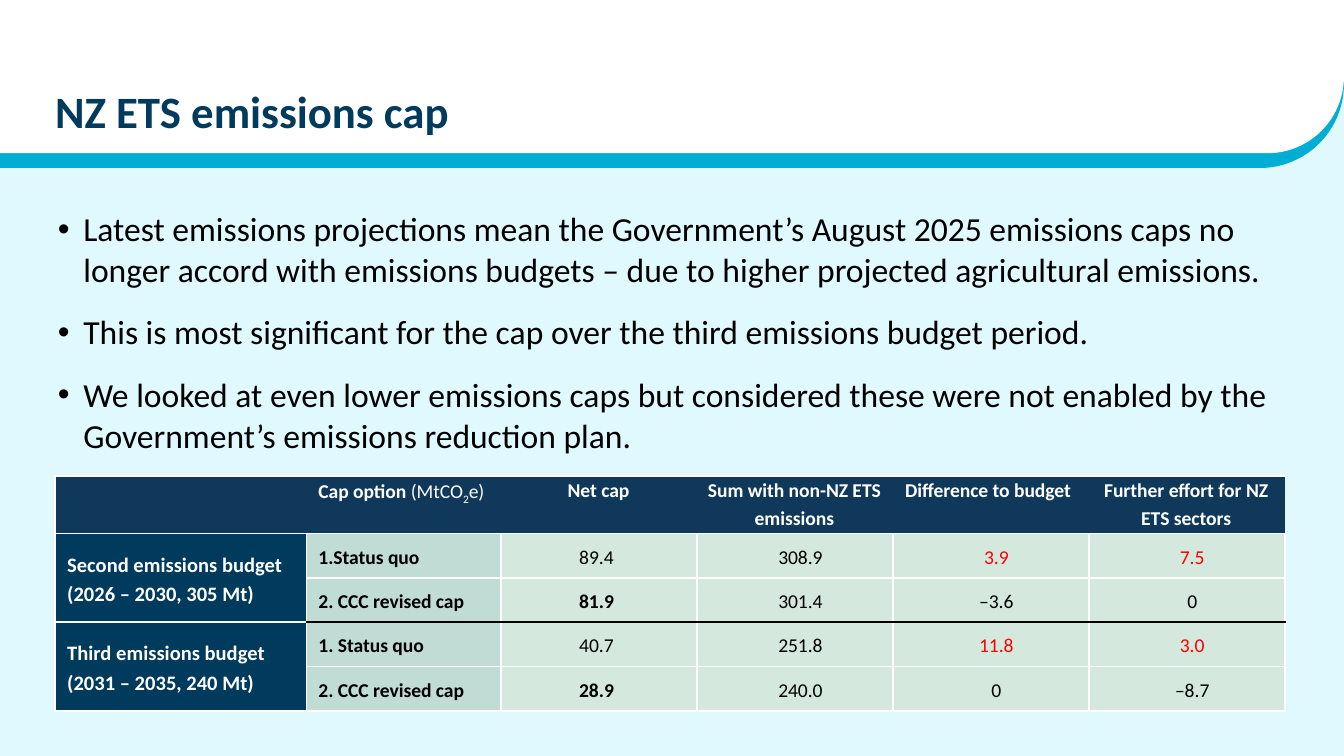
from lxml import etree
from pptx import Presentation
from pptx.dml.color import RGBColor
from pptx.enum.shapes import MSO_SHAPE
from pptx.enum.text import MSO_ANCHOR, MSO_AUTO_SIZE, PP_ALIGN
from pptx.oxml.ns import qn
from pptx.util import Inches, Pt

RECT, ROUNDED = MSO_SHAPE.RECTANGLE, MSO_SHAPE.ROUND_1_RECTANGLE
TOP, MIDDLE = MSO_ANCHOR.TOP, MSO_ANCHOR.MIDDLE
LEFT, CENTER = PP_ALIGN.LEFT, PP_ALIGN.CENTER
NO_AUTOFIT = MSO_AUTO_SIZE.NONE
FONT = "Calibri"
COLORS = {
    "white": "FFFFFF", "black": "000000", "red": "FF0000",
    "pale": "C3F4FF", "cyan": "00ADD3", "navy": "003A5D",
    "header": "0F385A", "option": "C1DCD5", "value": "D4E8DE",
}

TITLE = "NZ ETS emissions cap"
POINTS = [
    "Latest emissions projections mean the Government’s August 2025 emissions caps no longer "
    "accord with emissions budgets – due to higher projected agricultural emissions.",
    "This is most significant for the cap over the third emissions budget period.",
    "We looked at even lower emissions caps but considered these were not enabled by the "
    "Government’s emissions reduction plan.",
]
CAP_HEADING = [("Cap option ", {}), ("(MtCO", {"bold": False}),
               ("2", {"bold": False, "baseline": -25000}), ("e)", {"bold": False})]
VALUE_HEADINGS = ["Net cap", "Sum with non-NZ ETS emissions", "Difference to budget ",
                  "Further effort for NZ ETS sectors"]
BUDGETS = [
    (["Second emissions budget", "(2026 – 2030, 305 Mt)"],
     [("1.Status quo", ["89.4", "308.9", "3.9", "7.5"]),
      ("2. CCC revised cap", ["81.9", "301.4", "–3.6", "0"])]),
    (["Third emissions budget", "(2031 – 2035, 240 Mt)"],
     [("1. Status quo", ["40.7", "251.8", "11.8", "3.0"]),
      ("2. CCC revised cap", ["28.9", "240.0", "0", "–8.7"])]),
]
SLIDE_WIDTH = Inches(10)
SLIDE_HEIGHT = SLIDE_WIDTH * 9 // 16
TABLE_WIDTH, TABLE_HEIGHT = 9.15, 1.75
LABEL_WIDTHS = [1.87, 1.45]
VALUE_WIDTH = (TABLE_WIDTH - sum(LABEL_WIDTHS)) / len(VALUE_HEADINGS)
COLUMN_WIDTHS = LABEL_WIDTHS + [VALUE_WIDTH] * len(VALUE_HEADINGS)
ROW_HEIGHTS = [0.43] + [(TABLE_HEIGHT - 0.43) / 4] * 4
BANDS = [(RECT, SLIDE_HEIGHT, "pale"), (ROUNDED, Inches(1.25), "cyan"),
         (ROUNDED, Inches(1.14), "white")]


def rgb(name):
    return RGBColor.from_string(COLORS[name])


def write(frame, paragraphs, size, color="black", bold=False, align=LEFT,
          spacing=1.0, gap=0, bullet=None):
    for index, content in enumerate(paragraphs):
        paragraph = frame.paragraphs[0] if index == 0 else frame.add_paragraph()
        paragraph.alignment = align
        paragraph.line_spacing = spacing
        paragraph.space_before = Pt(gap if index else 0)
        paragraph.space_after = Pt(gap)
        if bullet:
            properties = paragraph._p.get_or_add_pPr()
            properties.set("marL", str(Inches(0.19)))
            properties.set("indent", str(-Inches(0.19)))
            etree.SubElement(properties, qn("a:buFont"), typeface="Arial")
            etree.SubElement(properties, qn("a:buChar"), char=bullet)
        runs = [(content, {})] if isinstance(content, str) else content
        for text, changes in runs:
            run = paragraph.add_run()
            run.text = text
            run.font.name = FONT
            run.font.size = Pt(size)
            run.font.bold = changes.get("bold", bold)
            run.font.color.rgb = rgb(color)
            if "baseline" in changes:
                run.font._element.set("baseline", str(changes["baseline"]))


def place(placeholder, left, top, width, height, anchor):
    placeholder.left, placeholder.top = Inches(left), Inches(top)
    placeholder.width, placeholder.height = Inches(width), Inches(height)
    frame = placeholder.text_frame
    frame.margin_left = frame.margin_right = frame.margin_top = frame.margin_bottom = 0
    frame.vertical_anchor = anchor
    frame.word_wrap = True
    frame.auto_size = NO_AUTOFIT
    return frame


def set_borders(cell, **sides):
    properties = cell._tc.get_or_add_tcPr()
    for index, side in enumerate("LRTB"):
        color = sides.get(side, "white")
        line = etree.Element(qn("a:ln" + side), w=str(Pt(1)))
        if color:
            fill = etree.SubElement(line, qn("a:solidFill"))
            etree.SubElement(fill, qn("a:srgbClr"), val=COLORS[color])
        else:
            etree.SubElement(line, qn("a:noFill"))
        properties.insert(index, line)


def fill_cell(cell, paragraphs, fill, indent=0.0, anchor=MIDDLE, size=10.5, **style):
    cell.margin_left, cell.margin_right = Inches(indent), Inches(0.04)
    cell.margin_top = cell.margin_bottom = 0
    cell.vertical_anchor = anchor
    cell.fill.solid()
    cell.fill.fore_color.rgb = rgb(fill)
    write(cell.text_frame, paragraphs, size, spacing=1.15, **style)


def add_bands(slide):
    for depth, (kind, height, color) in enumerate(BANDS):
        band = slide.shapes.add_shape(kind, 0, 0, SLIDE_WIDTH, height)
        band.shadow.inherit = False
        band.fill.solid()
        band.fill.fore_color.rgb = rgb(color)
        band.line.fill.background()
        if kind == ROUNDED:
            band.adjustments[0] = 0.5
            band.rotation = 180
            band._element.spPr.find(qn("a:xfrm")).set("flipH", "1")
        else:
            tint = band._element.spPr.find(".//" + qn("a:srgbClr"))
            etree.SubElement(tint, qn("a:alpha"), val="50000")
        slide.shapes._spTree.insert(2 + depth, band._element)


def add_budget_table(slide):
    table = slide.shapes.add_table(
        len(ROW_HEIGHTS), len(COLUMN_WIDTHS), Inches(0.41), Inches(3.54),
        Inches(TABLE_WIDTH), Inches(TABLE_HEIGHT)).table
    for column, width in zip(table.columns, COLUMN_WIDTHS):
        column.width = Inches(width)
    for row, height in zip(table.rows, ROW_HEIGHTS):
        row.height = Inches(height)

    headings = [[], [CAP_HEADING]] + [[heading] for heading in VALUE_HEADINGS]
    for column, heading in enumerate(headings):
        cell = table.cell(0, column)
        fill_cell(cell, heading, "header", indent=0.09 if column < 2 else 0.03, anchor=TOP,
                  color="white", bold=True, align=LEFT if column < 2 else CENTER)
        set_borders(cell, L=None if column else "white", R=None)

    for group, (budget, options) in enumerate(BUDGETS):
        first = 1 + 2 * group
        table.cell(first, 0).merge(table.cell(first + 1, 0))
        fill_cell(table.cell(first, 0), budget, "navy", indent=0.09, size=11,
                  color="white", bold=True)
        for offset, (option, values) in enumerate(options):
            row = first + offset
            fill_cell(table.cell(row, 1), [option], "option", indent=0.09, bold=True)
            for column, value in enumerate(values, 2):
                highlighted = offset == 0 and column > 3
                fill_cell(table.cell(row, column), [value], "value",
                          indent=0.12 if column > 2 else 0, align=CENTER,
                          color="red" if highlighted else "black",
                          bold=offset == 1 and column == 2)
            for column in range(len(COLUMN_WIDTHS)):
                divider = "black" if column else "white"
                set_borders(table.cell(row, column),
                            T=divider if row == 3 else "white",
                            B=divider if row == 2 else "white")


def main():
    deck = Presentation()
    deck.slide_width, deck.slide_height = SLIDE_WIDTH, SLIDE_HEIGHT
    slide = deck.slides.add_slide(deck.slide_layouts[1])
    add_bands(slide)
    title = place(slide.shapes.title, 0.41, 0.3, 8.9, 1.09, MIDDLE)
    write(title, [TITLE], 24, color="navy", bold=True, spacing=0.9)
    points = place(slide.placeholders[1], 0.43, 1.55, 9.25, 1.98, TOP)
    write(points, POINTS, 18, gap=6, bullet="•")
    add_budget_table(slide)
    deck.save("out.pptx")


if __name__ == "__main__":
    main()
